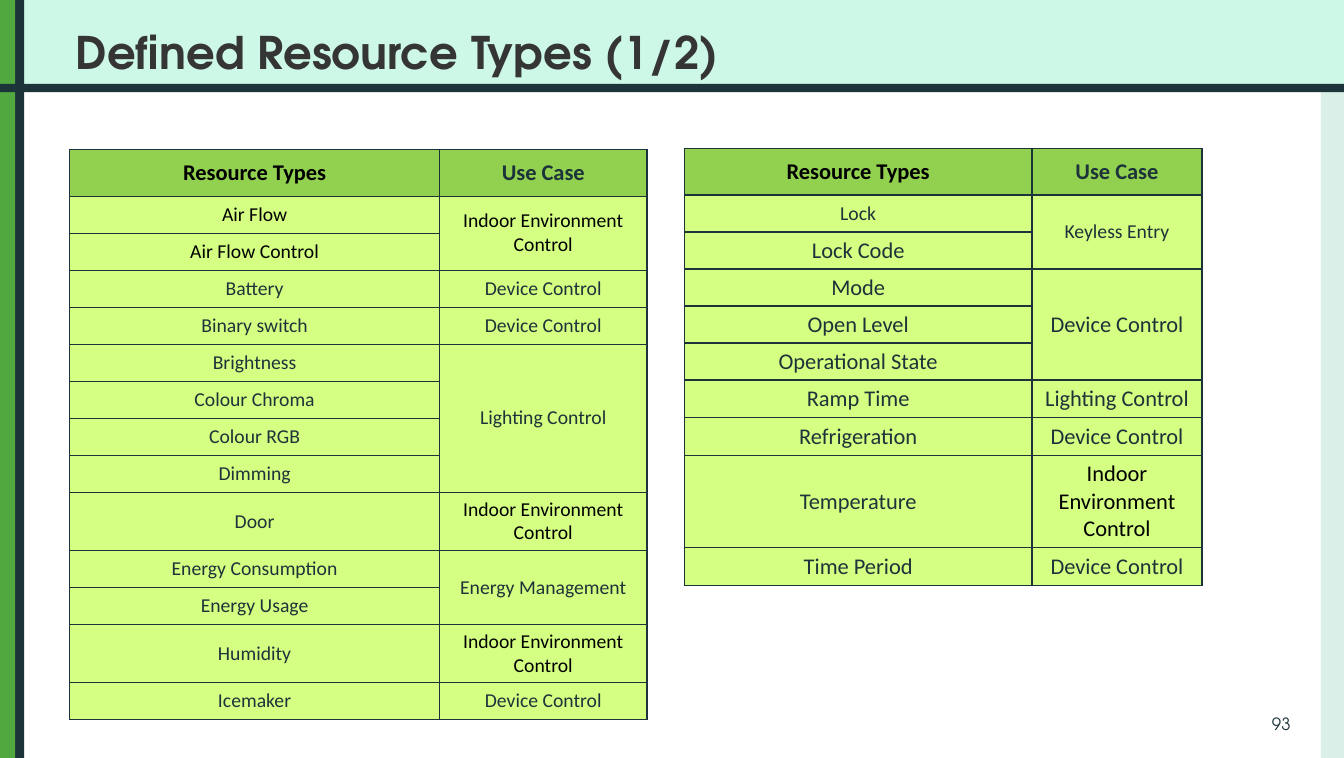
"""Build the slide that lists the defined resource types by use case."""
import pptx
import pptx.util
import pptx.dml.color
import pptx.enum.shapes
import pptx.enum.text
import lxml.etree

Cm = pptx.util.Cm
RGB = pptx.dml.color.RGBColor
ALIGN = pptx.enum.text.PP_ALIGN
ANCHOR = pptx.enum.text.MSO_ANCHOR

DARK = RGB(0x1C, 0x33, 0x39)
GREY = RGB(0x34, 0x35, 0x34)
BLACK = RGB(0, 0, 0)
GREEN = RGB(0x50, 0xA8, 0x3E)
MINT = RGB(0xCD, 0xF7, 0xE6)
PALE = RGB(0xDB, 0xEF, 0xE9)
HEAD = RGB(0x92, 0xD0, 0x50)
LIME = RGB(0xD4, 0xFF, 0x82)

WIDE, HIGH = 33.78, 19.05
BAR = 2.11
TITLE = "Defined Resource Types (1/2)"
NUMBER = "93"
HEADS = ("Resource Types", "Use Case")
INDOOR = "Indoor Environment Control"
DEVICE = "Device Control"
LIGHT = "Lighting Control"
INK = {"Air Flow", "Air Flow Control", INDOOR}
SMALL = {"Lock", "Keyless Entry"}
HEAD_ROW, ROW = 1.17, 0.93
BANDS = [
    (0.56, 0, WIDE - 0.56, BAR, MINT),
    (0.18, 0, 0.43, HIGH, DARK),
    (0, 0, 0.38, HIGH, GREEN),
    (33.2, BAR, 0.58, HIGH - BAR, PALE),
    (0, BAR, WIDE, 0.21, DARK),
]
TABLES = [
    {"left": 1.75, "top": 3.76, "cols": (9.3, 5.21), "size": 14, "tall": 1.46,
     "groups": [
         (INDOOR, ["Air Flow", "Air Flow Control"]),
         (DEVICE, ["Battery"]),
         (DEVICE, ["Binary switch"]),
         (LIGHT, ["Brightness", "Colour Chroma", "Colour RGB", "Dimming"]),
         (INDOOR, ["Door"]),
         ("Energy Management", ["Energy Consumption", "Energy Usage"]),
         (INDOOR, ["Humidity"]),
         (DEVICE, ["Icemaker"])]},
    {"left": 17.2, "top": 3.73, "cols": (8.74, 4.27), "size": 16, "tall": 2.32,
     "groups": [
         ("Keyless Entry", ["Lock", "Lock Code"]),
         (DEVICE, ["Mode", "Open Level", "Operational State"]),
         (LIGHT, ["Ramp Time"]),
         (DEVICE, ["Refrigeration"]),
         (INDOOR, ["Temperature"]),
         (DEVICE, ["Time Period"])]},
]


def write(frame, text, size=14, color=DARK, bold=False, font="Calibri",
          align=ALIGN.CENTER):
    """Put formatted text into a text frame."""
    para = frame.paragraphs[0]
    para.alignment = align
    run = para.add_run()
    run.text = text
    run.font.size = pptx.util.Pt(size)
    run.font.color.rgb = color
    run.font.bold = bold
    run.font.name = font


def band(slide, left, top, width, height, color):
    """Add a plain rectangle."""
    shape = slide.shapes.add_shape(
        pptx.enum.shapes.MSO_SHAPE.RECTANGLE,
        Cm(left), Cm(top), Cm(width), Cm(height))
    shape.shadow.inherit = False
    shape.fill.solid()
    shape.fill.fore_color.rgb = color
    shape.line.fill.background()


def dress(cell, color):
    """Give a cell its borders, fill and anchor."""
    props = cell._tc.get_or_add_tcPr()
    space = "{http://schemas.openxmlformats.org/drawingml/2006/main}"
    for side in ("lnL", "lnR", "lnT", "lnB"):
        line = lxml.etree.SubElement(props, space + side, w="12700")
        fill = lxml.etree.SubElement(line, space + "solidFill")
        lxml.etree.SubElement(fill, space + "srgbClr", val=str(DARK))
    cell.fill.solid()
    cell.fill.fore_color.rgb = color
    cell.vertical_anchor = ANCHOR.MIDDLE


def grid(slide, left, top, cols, size, tall, groups):
    """Add a table with one merged use case per group of types."""
    rows = [HEAD_ROW]
    for use, types in groups:
        alone = use == INDOOR and len(types) == 1
        rows += [tall if alone else ROW] * len(types)
    table = slide.shapes.add_table(
        len(rows), 2, Cm(left), Cm(top), Cm(sum(cols)), Cm(sum(rows))).table
    table.first_row = table.horz_banding = False
    for col, width in zip(table.columns, cols):
        col.width = Cm(width)
    for row, height in zip(table.rows, rows):
        row.height = Cm(height)
    for index, row in enumerate(table.rows):
        for cell in row.cells:
            dress(cell, LIME if index else HEAD)
        kind = row.cells[0]
        kind.margin_top = kind.margin_bottom = 0
        kind.margin_left = kind.margin_right = Cm(0.18)

    def entry(row, col, text):
        write(table.cell(row, col).text_frame, text,
              size=14 if text in SMALL else size,
              color=BLACK if text in INK else DARK)

    for col, color in enumerate((BLACK, DARK)):
        write(table.cell(0, col).text_frame, HEADS[col],
              size=16, color=color, bold=True)
    start = 1
    for use, types in groups:
        end = start + len(types)
        if len(types) > 1:
            table.cell(start, 1).merge(table.cell(end - 1, 1))
        entry(start, 1, use)
        for row, name in enumerate(types, start):
            entry(row, 0, name)
        start = end


def main():
    """Build and save the slide."""
    deck = pptx.Presentation()
    deck.slide_width, deck.slide_height = Cm(WIDE), Cm(HIGH)
    slide = deck.slides.add_slide(deck.slide_layouts[5])
    for item in BANDS:
        band(slide, *item)
    title = slide.shapes.title
    slide.shapes.element.append(title.element)
    title.left, title.top = Cm(1.65), Cm(0.2)
    title.width, title.height = Cm(30.48), Cm(1.91)
    frame = title.text_frame
    frame.auto_size = pptx.enum.text.MSO_AUTO_SIZE.NONE
    frame.vertical_anchor = ANCHOR.BOTTOM
    write(frame, TITLE, size=32, color=GREY, bold=True,
          font="TeX Gyre Adventor", align=ALIGN.LEFT)
    for table in TABLES:
        grid(slide, **table)
    box = slide.shapes.add_textbox(Cm(31.72), Cm(17.68), Cm(1.04), Cm(1.02))
    box.text_frame.word_wrap = True
    box.text_frame.vertical_anchor = ANCHOR.MIDDLE
    write(box.text_frame, NUMBER, size=12, font="TeX Gyre Adventor",
          align=ALIGN.LEFT)
    deck.save("out.pptx")


if __name__ == "__main__":
    main()
